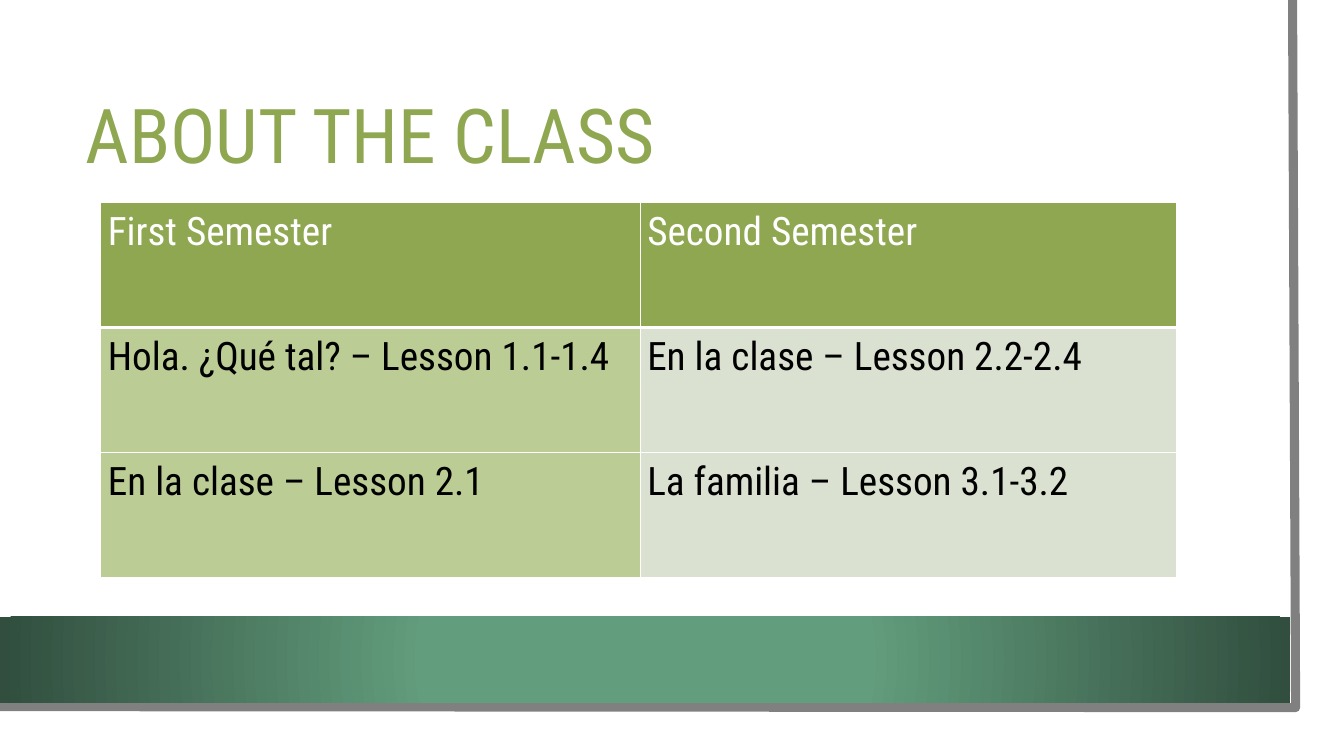
from lxml.etree import SubElement
from pptx import Presentation
from pptx.dml.color import RGBColor
from pptx.enum.shapes import MSO_SHAPE
from pptx.enum.text import MSO_ANCHOR, MSO_AUTO_SIZE, PP_ALIGN
from pptx.oxml import parse_xml
from pptx.oxml.ns import nsdecls, qn
from pptx.util import Inches, Pt

FONT = "Roboto Condensed"
WHITE, GREEN = "FFFFFF", "8FA751"


def paint(color, value):
    color.rgb = RGBColor.from_string(value)


def write(para, text, size, color, spacing):
    para.line_spacing = spacing
    para.alignment = PP_ALIGN.LEFT
    run = para.add_run()
    run.text = text
    run.font.name = FONT
    run.font.size = Pt(size)
    run.font.bold = False
    paint(run.font.color, color)


deck = Presentation()
deck.slide_width, deck.slide_height = Inches(13.33), Inches(7.5)
slide = deck.slides.add_slide(deck.slide_layouts[5])
shapes = slide.shapes

# White sheet with a grey edge
sheet = shapes.add_shape(MSO_SHAPE.RECTANGLE, 0, 0, Inches(13.1), Inches(7.27))
sheet.fill.solid()
paint(sheet.fill.fore_color, WHITE)

pen = shapes.build_freeform(Inches(12.82), 0)
pen.add_line_segments(
    [(Inches(12.85), Inches(7.02)), (Inches(-0.03), Inches(7.01))], close=False)
edge = pen.convert_to_shape()
edge.fill.background()
paint(edge.line.color, "808080")
edge.line.width = Pt(6.5)

# Green band, lightest in the middle
band = shapes.add_shape(
    MSO_SHAPE.RECTANGLE, 0, Inches(6.12), Inches(12.8), Inches(0.85))
band.element.spPr.find(qn("a:prstGeom")).addnext(parse_xml(
    f'<a:gradFill {nsdecls("a")} rotWithShape="1"><a:gsLst>'
    '<a:gs pos="34000"><a:srgbClr val="629D7D"/></a:gs>'
    '<a:gs pos="100000"><a:srgbClr val="314E3E"/></a:gs></a:gsLst>'
    '<a:path path="circle"><a:fillToRect l="50000" t="50000" r="50000" b="50000"/>'
    '</a:path></a:gradFill>'))

for shape in (sheet, edge, band):
    shape.shadow.inherit = False
for shape in (sheet, band):
    shape.line.fill.background()

# Title, in front of the sheet
title = shapes.title
shapes.element.append(title.element)
title.left, title.top = Inches(0.75), Inches(0.75)
title.width, title.height = Inches(11.37), Inches(1.26)
frame = title.text_frame
frame.word_wrap = True
frame.auto_size = MSO_AUTO_SIZE.NONE
frame.vertical_anchor = MSO_ANCHOR.MIDDLE
write(frame.paragraphs[0], "ABOUT THE CLASS", 54, GREEN, 0.9)

# Lessons by semester
lessons = [
    ("First Semester", "Second Semester"),
    ("Hola. ¿Qué tal? – Lesson 1.1-1.4", "En la clase – Lesson 2.2-2.4"),
    ("En la clase – Lesson 2.1", "La familia – Lesson 3.1-3.2"),
]
table = shapes.add_table(
    3, 2, Inches(1), Inches(2.01), Inches(10.67), Inches(3.72)).table
table.columns[0].width = Inches(5.35)
table.columns[1].width = Inches(5.32)

for r, row in enumerate(lessons):
    table.rows[r].height = Inches(1.24)
    for c, text in enumerate(row):
        cell = table.cell(r, c)
        cell.margin_left = cell.margin_right = Inches(0.07)
        cell.margin_top = cell.margin_bottom = 0
        props = cell._tc.get_or_add_tcPr()
        for side in ("L", "R", "T", "B"):
            thick = (r, side) in ((0, "B"), (1, "T"))
            line = SubElement(
                props, qn(f"a:ln{side}"), w=str(Pt(3 if thick else 1)))
            fill = SubElement(line, qn("a:solidFill"))
            SubElement(fill, qn("a:srgbClr"), val=WHITE)
        cell.fill.solid()
        paint(cell.fill.fore_color, GREEN if r == 0 else ("BCCC95", "DBE1D0")[c])
        write(cell.text_frame.paragraphs[0], text, 28,
              WHITE if r == 0 else "000000", 1.15)

deck.save("out.pptx")
